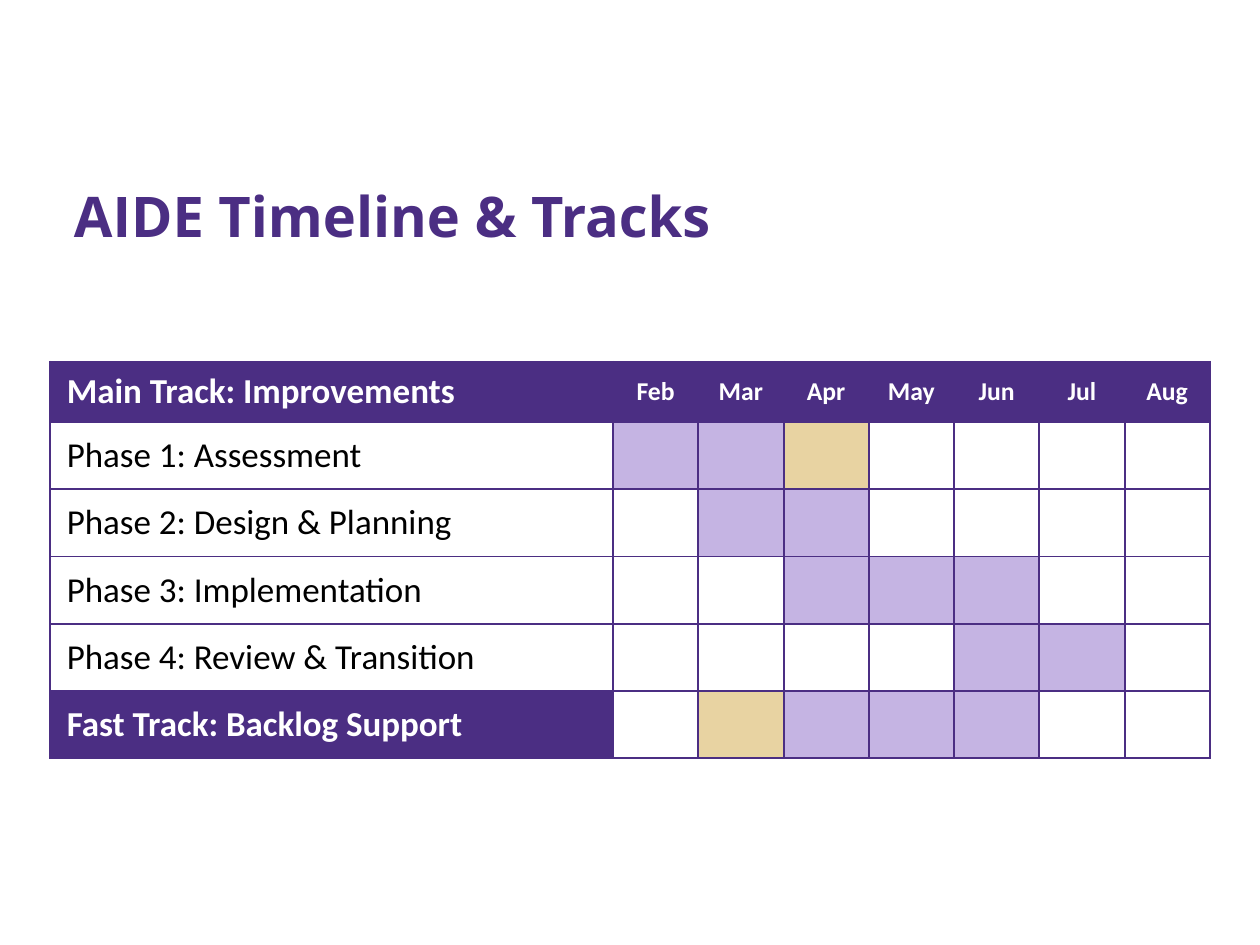
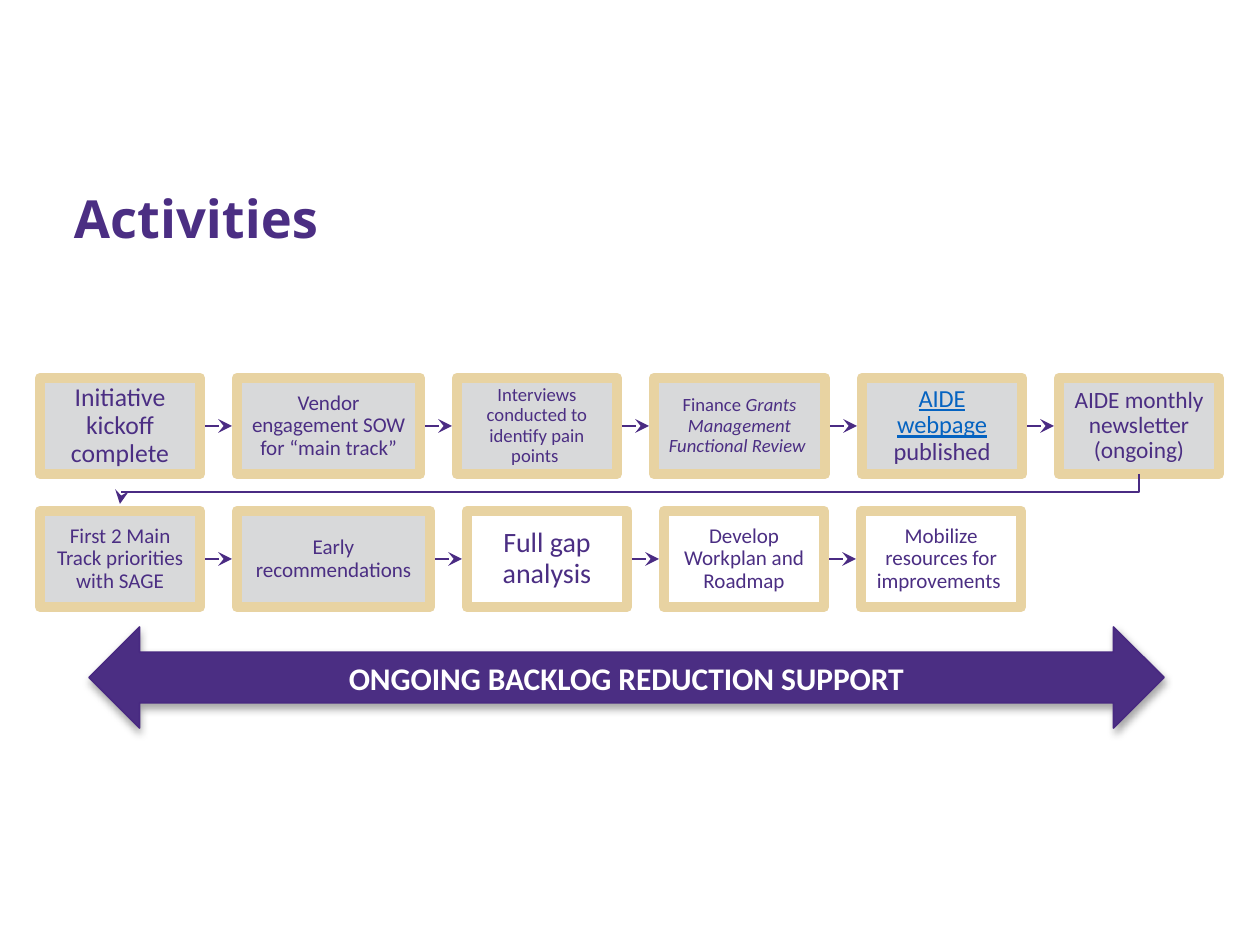
from dataclasses import dataclass
from itertools import pairwise

from lxml import etree
from pptx import Presentation
from pptx.dml.color import RGBColor
from pptx.enum.shapes import MSO_CONNECTOR, MSO_SHAPE
from pptx.enum.text import MSO_ANCHOR, PP_ALIGN
from pptx.oxml import parse_xml
from pptx.oxml.ns import nsdecls, qn
from pptx.util import Emu, Pt

RECT, DOUBLE_ARROW = MSO_SHAPE.RECTANGLE, MSO_SHAPE.LEFT_RIGHT_ARROW
STRAIGHT = MSO_CONNECTOR.STRAIGHT
MIDDLE, BOTTOM = MSO_ANCHOR.MIDDLE, MSO_ANCHOR.BOTTOM
LEFT, CENTER = PP_ALIGN.LEFT, PP_ALIGN.CENTER
PX_PER_INCH = 168


@dataclass(frozen=True)
class Theme:
    purple: str = "4B2E83"
    lavender: str = "C5B4E3"
    gold: str = "E8D3A2"
    grey: str = "D8D9DA"
    white: str = "FFFFFF"
    black: str = "000000"
    link: str = "0563C1"
    flow_line: str = "4A2B83"
    band_line: str = "482981"
    title_font: str = "Open Sans"
    body_font: str = "Calibri"
    track_size: float = 15
    month_size: float = 11
    band_size: float = 13.5
    thin: float = 0.75
    border: float = 1
    frame: float = 4.5


T = Theme()


@dataclass(frozen=True)
class Run:
    text: str
    color: str = T.purple
    bold: bool = False
    italic: bool = False
    underline: bool = False


@dataclass(frozen=True)
class Track:
    name: str
    months: str  # one letter a month, keyed in MONTH_FILL
    main: bool = False


@dataclass(frozen=True)
class Step:
    runs: tuple[Run, ...]
    size: float
    inset: int
    width: int = 160
    done: bool = True


# Timeline content
MONTHS = ("Feb", "Mar", "Apr", "May", "Jun", "Jul", "Aug")
MONTH_FILL = {"A": T.lavender, "K": T.gold, ".": T.white}
TRACKS = (
    Track("Phase 1: Assessment", "AAK...."),
    Track("Phase 2: Design & Planning", ".AA...."),
    Track("Phase 3: Implementation", "..AAA.."),
    Track("Phase 4: Review & Transition", "....AA."),
    Track("Fast Track: Backlog Support", ".KAAA..", main=True),
)

# Activities content
STEP_ROWS = (
    (
        Step((Run("Initiative kickoff complete"),), 11, 15),
        Step((Run("Vendor engagement SOW for “main track”"),), 9, 12, width=183),
        Step((Run("Interviews conducted to identify pain points "),), 8, 10),
        Step((Run("Finance "), Run("Grants Management Functional Review ", italic=True)),
             8, 10, width=171),
        Step((Run("AIDE webpage", T.link, underline=True), Run(" published")), 10.5, 15),
        Step((Run("AIDE monthly newsletter (ongoing)"),), 10, 13),
    ),
    (
        Step((Run("First 2 Main Track priorities with SAGE"),), 9, 12),
        Step((Run("Early recommendations"),), 9, 12, width=193),
        Step((Run("Full gap analysis"),), 12, 15, done=False),
        Step((Run("Develop Workplan and Roadmap"),), 9, 12, done=False),
        Step((Run("Mobilize resources for improvements "),), 9, 12, done=False),
    ),
)
STEP_LEFT, STEP_TOP, STEP_H = 40, 378, 96
STEP_GAP, ROW_PITCH, ARROW_LEN = 37, 133, 32


def px(n: int) -> Emu:
    return Emu(round(n * 914400 / PX_PER_INCH))


def rgb(code: str) -> RGBColor:
    return RGBColor.from_string(code)


def assign(target, values: dict) -> None:
    for name, value in values.items():
        setattr(target, name, value)


def write(tf, runs: tuple[Run, ...], size: float, font: str = T.body_font,
          align=LEFT, spacing: float | None = None) -> None:
    p = tf.paragraphs[0]
    assign(p, {"alignment": align, "line_spacing": spacing})
    for run in runs:
        r = p.add_run()
        r.text = run.text
        assign(r.font, {"name": font, "size": Pt(size), "bold": run.bold,
                        "italic": run.italic, "underline": run.underline})
        r.font.color.rgb = rgb(run.color)


def frame_text(tf, anchor, side: int, top: int, bottom: int) -> None:
    assign(tf, {"word_wrap": True, "vertical_anchor": anchor,
                "margin_left": px(side), "margin_right": px(side),
                "margin_top": px(top), "margin_bottom": px(bottom)})


def paint(sp, fill: str | None, line: str, width: float) -> None:
    sp.shadow.inherit = False
    if fill:
        sp.fill.solid()
        sp.fill.fore_color.rgb = rgb(fill)
    else:
        sp.fill.background()
    sp.line.color.rgb = rgb(line)
    sp.line.width = Pt(width)


def add_head(sp) -> None:
    ln = sp.element.spPr.find(qn("a:ln"))
    etree.SubElement(ln, qn("a:tailEnd"), type="stealth")


def add_title(s, text: str, size: float) -> None:
    tf = s.shapes.add_textbox(px(62), px(67), px(1129), px(183)).text_frame
    frame_text(tf, BOTTOM, side=12, top=7, bottom=1)
    write(tf, (Run(text, bold=True),), size, T.title_font)


def style_cell(cell, fill: str) -> None:
    cell.fill.solid()
    cell.fill.fore_color.rgb = rgb(fill)
    cell.vertical_anchor = MIDDLE
    tc_pr = cell._tc.get_or_add_tcPr()
    for i, side in enumerate("LRTB"):
        tc_pr.insert(i, parse_xml(
            f'<a:ln{side} {nsdecls("a")} w="{Pt(T.border)}"><a:solidFill>'
            f'<a:srgbClr val="{T.purple}"/></a:solidFill></a:ln{side}>'))


def add_timeline(s) -> None:
    label_w, months_w, head_h, row_h = 563, 597, 60, 64
    table = s.shapes.add_table(
        len(TRACKS) + 1, len(MONTHS) + 1, px(50), px(362),
        px(label_w + months_w), px(head_h + row_h * len(TRACKS))).table
    assign(table, {"first_row": False, "horz_banding": False})
    for i, col in enumerate(table.columns):
        col.width = Emu(px(months_w) // len(MONTHS)) if i else px(label_w)
    for i, row in enumerate(table.rows):
        row.height = px(row_h if i else head_h)

    # Header row
    for i, text in enumerate(("Main Track: Improvements", *MONTHS)):
        cell = table.cell(0, i)
        style_cell(cell, T.purple)
        write(cell.text_frame, (Run(text, T.white, bold=True),),
              T.month_size if i else T.track_size, align=CENTER if i else LEFT)

    # Track rows
    for i, track in enumerate(TRACKS, 1):
        cell = table.cell(i, 0)
        style_cell(cell, T.purple if track.main else T.white)
        color = T.white if track.main else T.black
        write(cell.text_frame, (Run(track.name, color, bold=track.main),), T.track_size)
        for j, month in enumerate(track.months, 1):
            style_cell(table.cell(i, j), MONTH_FILL[month])


def add_flow_arrow(s, x: int, y: int) -> None:
    sp = s.shapes.add_connector(STRAIGHT, px(x), px(y), px(x + ARROW_LEN), px(y))
    sp.line.color.rgb = rgb(T.flow_line)
    sp.line.width = Pt(T.thin)
    add_head(sp)
    etree.SubElement(sp.element.spPr, qn("a:effectLst"))


def add_return_arrow(s, start_x: int, end_x: int, top: int) -> None:
    points = [(start_x, top), (start_x, top + 18), (end_x, top + 18), (end_x, top + 30)]
    corners = [(px(x), px(y)) for x, y in points]
    builder = s.shapes.build_freeform(*corners[0])
    builder.add_line_segments(corners[1:], close=False)
    sp = builder.convert_to_shape()
    paint(sp, None, T.flow_line, T.thin)
    add_head(sp)


def add_step(s, step: Step, x: int, y: int) -> None:
    sp = s.shapes.add_shape(RECT, px(x), px(y), px(step.width), px(STEP_H))
    paint(sp, T.grey if step.done else None, T.gold, T.frame)
    frame_text(sp.text_frame, MIDDLE, step.inset, step.inset, step.inset)
    write(sp.text_frame, step.runs, step.size, align=CENTER, spacing=0.9)


def add_steps(s) -> None:
    ends = []
    for i, steps in enumerate(STEP_ROWS):
        y = STEP_TOP + i * ROW_PITCH
        lefts = [STEP_LEFT]
        for step in steps[:-1]:
            lefts.append(lefts[-1] + step.width + STEP_GAP)
        for _, right in pairwise(lefts):
            add_flow_arrow(s, right - STEP_GAP, y + STEP_H // 2)
        for step, x in zip(steps, lefts):
            add_step(s, step, x, y)
        ends.append(lefts[-1] + steps[-1].width // 2)
    first_center = STEP_LEFT + STEP_ROWS[1][0].width // 2
    add_return_arrow(s, ends[0], first_center, STEP_TOP + STEP_H)


def add_support_band(s) -> None:
    sp = s.shapes.add_shape(DOUBLE_ARROW, px(89), px(627), px(1075), px(101))
    paint(sp, T.purple, T.band_line, T.thin)
    sp.element.spPr.find(qn("a:effectLst")).append(parse_xml(
        f'<a:outerShdw {nsdecls("a")} blurRad="40000" dist="23000" dir="5400000" '
        f'rotWithShape="0"><a:srgbClr val="{T.black}"><a:alpha val="35000"/>'
        '</a:srgbClr></a:outerShdw>'))
    frame_text(sp.text_frame, MIDDLE, side=17, top=8, bottom=8)
    write(sp.text_frame, (Run("ONGOING BACKLOG REDUCTION SUPPORT", T.white, bold=True),),
          T.band_size, align=CENTER)


def main() -> None:
    prs = Presentation()
    assign(prs, {"slide_width": px(1260), "slide_height": px(945)})
    blank = prs.slide_layouts[6]

    # Timeline slide
    s = prs.slides.add_slide(blank)
    add_title(s, "AIDE Timeline & Tracks", 24)
    add_timeline(s)

    # Activities slide
    s = prs.slides.add_slide(blank)
    add_title(s, "Activities", 22.5)
    add_steps(s)
    add_support_band(s)

    prs.save("out.pptx")


if __name__ == "__main__":
    main()
